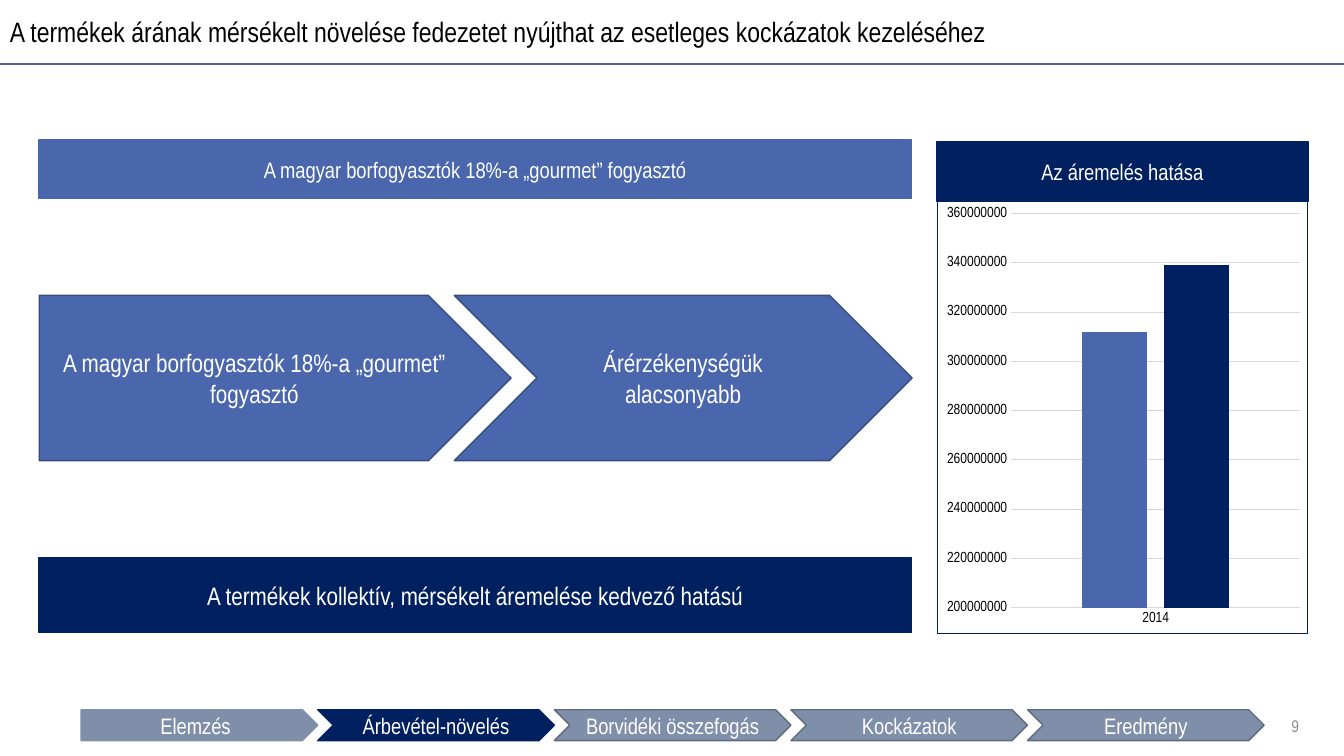
import pptx
import pptx.chart.data
import pptx.dml.color
import pptx.enum.chart
import pptx.enum.shapes
import pptx.enum.text
import pptx.oxml
import pptx.oxml.ns
import pptx.util

Pt = pptx.util.Pt
SHAPE = pptx.enum.shapes.MSO_SHAPE
ALIGN = pptx.enum.text.PP_ALIGN
FONT = "Arial Narrow"
COLORS = {
    "blue": "4A66AC", "blue_edge": "374B7F", "navy": "002060",
    "steel": "7F8FA9", "steel_edge": "5E6A7D",
    "grid": "D9D9D9", "number": "8C8C8C", "black": "000000", "white": "FFFFFF",
}
RGB = {name: pptx.dml.color.RGBColor.from_string(code) for name, code in COLORS.items()}

prs = pptx.Presentation()
prs.slide_width, prs.slide_height = Pt(960), Pt(540)
slide = prs.slides.add_slide(prs.slide_layouts[6])


def write(holder, text, size, color, align, wrap=True):
    frame = holder.text_frame
    frame.word_wrap = wrap
    frame.vertical_anchor = pptx.enum.text.MSO_ANCHOR.MIDDLE
    paragraph = frame.paragraphs[0]
    paragraph.text = text
    paragraph.alignment = align
    for key, value in {"name": FONT, "size": Pt(size)}.items():
        setattr(paragraph.font, key, value)
    paragraph.font.color.rgb = RGB[color]
    return paragraph


def add_block(kind, box, text, size, fill, edge, wrap=True):
    block = slide.shapes.add_shape(kind, *map(Pt, box))
    block.shadow.inherit = False
    block.fill.solid()
    block.fill.fore_color.rgb = RGB[fill]
    block.line.color.rgb = RGB[edge]
    block.line.width = Pt(1)
    write(block, text, size, "white", ALIGN.CENTER, wrap)


# Heading, rule and page number
rule = slide.shapes.add_connector(
    pptx.enum.shapes.MSO_CONNECTOR.STRAIGHT, 0, Pt(46), Pt(960), Pt(46))
rule.line.color.rgb = RGB["blue"]
rule.line.width = Pt(1.5)
rule._element.spPr.append(pptx.oxml.parse_xml(
    f'<a:effectLst {pptx.oxml.ns.nsdecls("a")}/>'))

page_number = slide.shapes.add_textbox(Pt(905), Pt(504), Pt(30), Pt(29))
write(page_number, "9", 12, "number", ALIGN.RIGHT)

heading = slide.shapes.add_textbox(0, 0, Pt(793), Pt(48))
write(heading, "A termékek árának mérsékelt növelése fedezetet nyújthat az esetleges "
      "kockázatok kezeléséhez", 20, "black", ALIGN.LEFT).line_spacing = 0.9

# Argument on the left
gourmet = "A magyar borfogyasztók 18%-a „gourmet” fogyasztó"
LEFT, WIDTH = 28, 623
add_block(SHAPE.RECTANGLE, (LEFT, 100, WIDTH, 42), gourmet, 16, "blue", "blue")
add_block(SHAPE.PENTAGON, (LEFT, 211, 337, 118), gourmet, 18, "blue", "blue_edge")
add_block(SHAPE.CHEVRON, (324.5, 211, 327, 118), "Árérzékenységük alacsonyabb",
          18, "blue", "blue_edge")
add_block(SHAPE.RECTANGLE, (LEFT, 398, WIDTH, 54),
          "A termékek kollektív, mérsékelt áremelése kedvező hatású", 18, "navy", "navy")

# Price increase chart
CHART_LEFT, CHART_WIDTH = 669, 265.5
revenue = pptx.chart.data.CategoryChartData(number_format="0")
revenue.categories = ["2014"]
revenue.add_series("Series 1", [312000000])
revenue.add_series("Series 2", [339000000])
chart = slide.shapes.add_chart(
    pptx.enum.chart.XL_CHART_TYPE.COLUMN_CLUSTERED,
    Pt(CHART_LEFT), Pt(143), Pt(CHART_WIDTH), Pt(310), revenue).chart
chart.has_title = chart.has_legend = False
chart.font.name = FONT
chart.font.size = Pt(10)
chart.font.color.rgb = RGB["black"]

plot = chart.plots[0]
for key, value in {"gap_width": 219, "overlap": -27, "vary_by_categories": False}.items():
    setattr(plot, key, value)
for series, color in zip(plot.series, ("blue", "navy")):
    series.format.fill.solid()
    series.format.fill.fore_color.rgb = RGB[color]

years, amounts = chart.category_axis, chart.value_axis
for axis in (years, amounts):
    axis.major_tick_mark = axis.minor_tick_mark = pptx.enum.chart.XL_TICK_MARK.NONE
    axis.tick_labels.font.name = FONT
    axis.tick_labels.font.size = Pt(10.5)
    axis.tick_labels.font.color.rgb = RGB["black"]
for key, value in {"minimum_scale": 200000000, "maximum_scale": 360000000,
                   "major_unit": 20000000, "has_major_gridlines": True}.items():
    setattr(amounts, key, value)
amounts.format.line.fill.background()
for line in (years.format.line, amounts.major_gridlines.format.line):
    line.color.rgb = RGB["grid"]
    line.width = Pt(0.75)

chart_xml = chart._chartSpace.chart
chart_xml.addnext(pptx.oxml.parse_xml(
    f'<c:spPr {pptx.oxml.ns.nsdecls("c", "a")}><a:noFill/><a:ln w="9525"><a:solidFill>'
    f'<a:srgbClr val="{COLORS["navy"]}"/></a:solidFill></a:ln></c:spPr>'))
plot_area = chart_xml.plotArea
for layout in plot_area.findall(pptx.oxml.ns.qn("c:layout")):
    plot_area.remove(layout)
plot_area.insert(0, pptx.oxml.parse_xml(
    f'<c:layout {pptx.oxml.ns.nsdecls("c")}><c:manualLayout><c:layoutTarget val="inner"/>'
    '<c:xMode val="edge"/><c:yMode val="edge"/><c:x val="0.2"/><c:y val="0.03"/>'
    '<c:w val="0.78"/><c:h val="0.91"/></c:manualLayout></c:layout>'))

add_block(SHAPE.RECTANGLE, (CHART_LEFT, 101.5, CHART_WIDTH, 42), "Az áremelés hatása",
          16, "navy", "navy")

# Progress bar of chapters
chapters = [
    ("Elemzés", SHAPE.PENTAGON, "steel", "steel"),
    ("Árbevétel-növelés", SHAPE.CHEVRON, "navy", "navy"),
    ("Borvidéki összefogás", SHAPE.CHEVRON, "steel", "steel_edge"),
    ("Kockázatok", SHAPE.CHEVRON, "steel", "steel_edge"),
    ("Eredmény", SHAPE.CHEVRON, "steel", "steel_edge"),
]
for i, (chapter, kind, fill, edge) in enumerate(chapters):
    add_block(kind, (58 + 169 * i, 507, 169, 22), chapter, 16, fill, edge, wrap=False)

prs.save("out.pptx")
